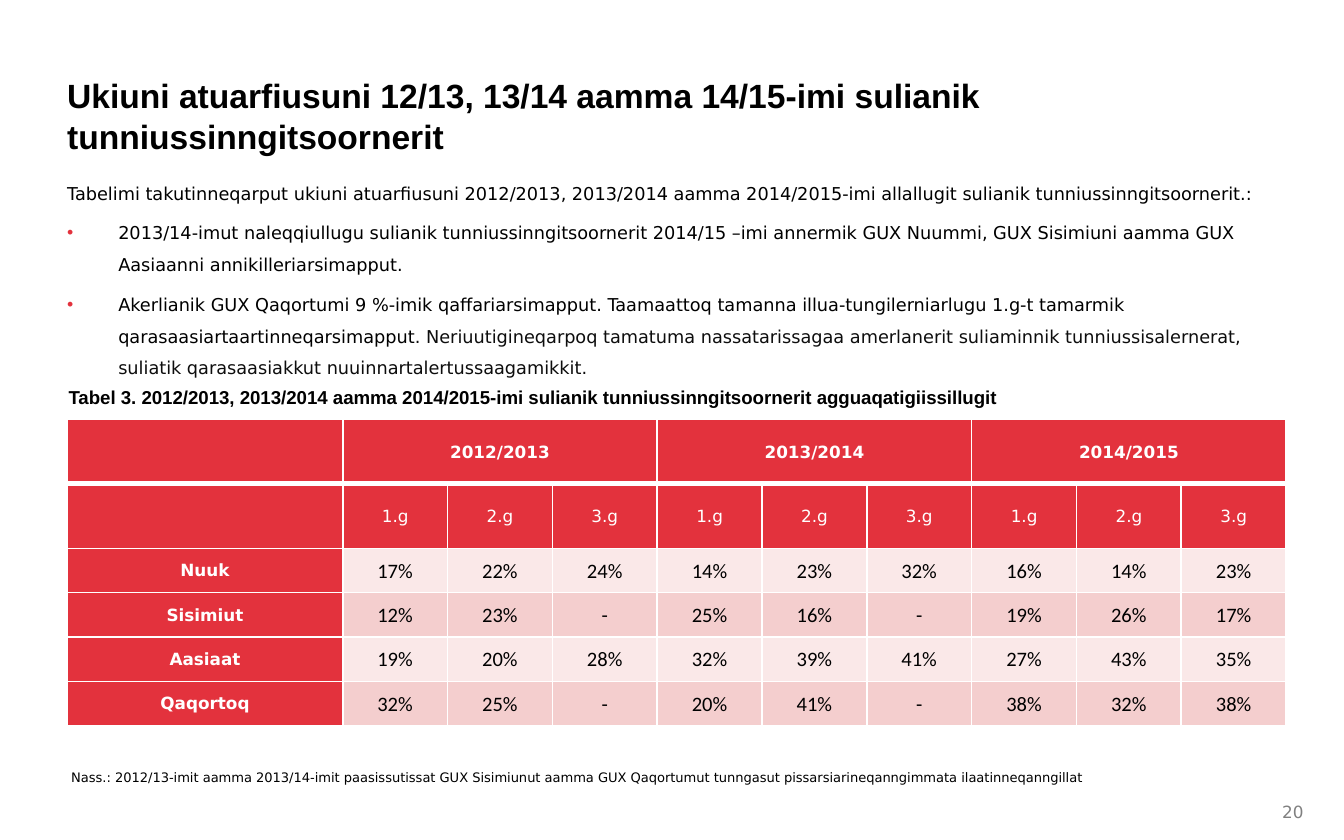
"""Build the slide on pupils without grades at the upper secondary schools."""
from dataclasses import dataclass

from lxml.etree import SubElement
from pptx import Presentation
from pptx.dml.color import RGBColor
from pptx.enum.text import MSO_ANCHOR as Anchor, MSO_AUTO_SIZE as AutoSize, PP_ALIGN as Align
from pptx.oxml.ns import qn
from pptx.util import Emu, Pt

PX = 9144
COLOURS = {"red": "E3323D", "black": "000000", "soft_black": "0D0D0D", "grey": "808080",
           "white": "FFFFFF", "pale": "FAE8E8", "pink": "F4CECE"}
INDENT = 38
YEARS = ["2012/2013", "2013/2014", "2014/2015"]
GRADES = ["1.g", "2.g", "3.g"]
SCHOOLS = {
    "Nuuk": "17% 22% 24% 14% 23% 32% 16% 14% 23%",
    "Sisimiut": "12% 23% - 25% 16% - 19% 26% 17%",
    "Aasiaat": "19% 20% 28% 32% 39% 41% 27% 43% 35%",
    "Qaqortoq": "32% 25% - 20% 41% - 38% 32% 38%",
}


@dataclass(frozen=True)
class Style:
    size: float
    font: str = "DejaVu Sans"
    colour: str = "black"
    bold: bool = False


@dataclass(frozen=True)
class Para:
    runs: tuple[tuple[str, Style], ...]
    spacing: float = 1.5
    bullet: bool = False


BODY = Style(9.5)
BODY_SOFT = Style(9.5, colour="soft_black")
HEADING = Style(9, colour="white", bold=True)
GRADE = Style(9, colour="white")
SHARE = Style(11, "Calibri")


def px(length: int) -> Emu:
    return Emu(length * PX)


def rgb(name: str) -> RGBColor:
    return RGBColor.from_string(COLOURS[name])


def add_run(paragraph, text: str, style: Style) -> None:
    run = paragraph.add_run()
    run.text = text
    run.font.size = Pt(style.size)
    run.font.name = style.font
    run.font.bold = style.bold
    run.font.color.rgb = rgb(style.colour)


def set_bullet(paragraph, bullet: bool) -> None:
    props = paragraph._p.get_or_add_pPr()
    margin = px(INDENT) if bullet else 0
    props.set("marL", str(margin))
    props.set("indent", str(-margin))
    if bullet:
        colour = SubElement(props, qn("a:buClr"))
        SubElement(colour, qn("a:srgbClr"), val=COLOURS["red"])
        SubElement(props, qn("a:buFont"), typeface="Arial")
        SubElement(props, qn("a:buChar"), char="•")
    else:
        SubElement(props, qn("a:buNone"))


def fill_text(shape, box: tuple[int, int, int, int], paras: list[Para],
              anchor: Anchor = Anchor.TOP) -> None:
    shape.left, shape.top, shape.width, shape.height = map(px, box)
    frame = shape.text_frame
    frame.word_wrap = True
    frame.auto_size = AutoSize.NONE
    frame.vertical_anchor = anchor
    frame.margin_left = frame.margin_top = frame.margin_right = frame.margin_bottom = 0
    for position, para in enumerate(paras):
        paragraph = frame.add_paragraph() if position else frame.paragraphs[0]
        set_bullet(paragraph, para.bullet)
        paragraph.alignment = Align.LEFT
        paragraph.line_spacing = para.spacing
        paragraph.space_before = Pt(2 if position else 0)
        paragraph.space_after = Pt(2)
        for text, style in para.runs:
            add_run(paragraph, text, style)


def fill_cell(cell, text: str, style: Style, fill: str, top: int = 1, bottom: int = 1) -> None:
    props = cell._tc.get_or_add_tcPr()
    for side, width in (("L", 1), ("R", 1), ("T", top), ("B", bottom)):
        line = SubElement(props, qn(f"a:ln{side}"), w=str(Pt(width)))
        SubElement(SubElement(line, qn("a:solidFill")), qn("a:srgbClr"), val=COLOURS["white"])
    cell.fill.solid()
    cell.fill.fore_color.rgb = rgb(fill)
    cell.vertical_anchor = Anchor.MIDDLE
    cell.margin_left = cell.margin_top = cell.margin_right = px(1)
    cell.margin_bottom = 0
    paragraph = cell.text_frame.paragraphs[0]
    paragraph.alignment = Align.CENTER
    if text:
        add_run(paragraph, text, style)
    else:
        paragraph.font.size = Pt(style.size)


def add_share_table(slide) -> None:
    heights = [48, 48] + [33] * len(SCHOOLS)
    widths = [205] + [78] * (len(YEARS) * len(GRADES))
    table = slide.shapes.add_table(len(heights), len(widths), px(50), px(312),
                                   px(sum(widths)), px(sum(heights))).table
    table.horz_banding = False
    for row, height in zip(table.rows, heights):
        row.height = px(height)
    for column, width in zip(table.columns, widths):
        column.width = px(width)

    year_row = [""] + [label for year in YEARS for label in (year, "", "")]
    for column, label in enumerate(year_row):
        fill_cell(table.cell(0, column), label, HEADING, "red", bottom=3)
    for first in range(1, len(widths), len(GRADES)):
        table.cell(0, first).merge(table.cell(0, first + len(GRADES) - 1))
    for column, label in enumerate([""] + GRADES * len(YEARS)):
        fill_cell(table.cell(1, column), label, GRADE, "red", top=3)
    for row, (school, shares) in enumerate(SCHOOLS.items(), start=2):
        fill_cell(table.cell(row, 0), school, HEADING, "red")
        for column, share in enumerate(shares.split(), start=1):
            fill_cell(table.cell(row, column), share, SHARE, "pink" if row % 2 else "pale")


def main() -> None:
    deck = Presentation()
    deck.slide_width, deck.slide_height = px(1000), px(625)
    slide = deck.slides.add_slide(deck.slide_layouts[3])
    title, findings, source_note = slide.placeholders

    fill_text(title, (50, 56, 917, 59), [Para(((
        "Ukiuni atuarfiusuni 12/13, 13/14 aamma 14/15-imi sulianik tunniussinngitsoornerit",
        Style(18, "Arial", bold=True)),), 1)])
    fill_text(findings, (50, 128, 900, 150), [
        Para((("Tabelimi takutinneqarput ukiuni atuarfiusuni 2012/2013, 2013/2014 aamma "
               "2014/2015-imi allallugit sulianik tunniussinngitsoornerit.:", BODY),)),
        Para((("2013/14-imut naleqqiullugu sulianik tunniussinngitsoornerit 2014/15 –imi annermik "
               "GUX Nuummi, GUX Sisimiuni aamma GUX Aasiaanni annikilleriarsimapput.", BODY),),
             bullet=True),
        Para((("Akerlianik GUX Qaqortumi 9 %-imik qaffariarsimapput. Taamaattoq tamanna "
               "illua-tungilerniarlugu 1.g-t tamarmik qarasaasiartaartinneqarsimapput", BODY),
              (". Neriuutigineqarpoq tamatuma nassatarissagaa amerlanerit suliaminnik "
               "tunniussisalernerat, suliatik qarasaasiakkut nuuinnartalertussaagamikkit.",
               BODY_SOFT)), bullet=True),
    ])
    fill_text(source_note, (53, 567, 900, 33), [Para(((
        "Nass.: 2012/13-imit aamma 2013/14-imit paasissutissat GUX Sisimiunut aamma GUX Qaqortumut "
        "tunngasut pissarsiarineqanngimmata ilaatinneqanngillat", Style(7)),))])

    caption = slide.shapes.add_textbox(0, 0, 0, 0)
    fill_text(caption, (51, 285, 782, 19), [Para(((
        "Tabel 3. 2012/2013, 2013/2014 aamma 2014/2015-imi sulianik tunniussinngitsoornerit "
        "agguaqatigiissillugit", Style(10, "Arial", bold=True)),), 1.14)])
    page_number = slide.shapes.add_textbox(0, 0, 0, 0)
    fill_text(page_number, (954, 598, 21, 9),
              [Para((("20", Style(9, colour="grey")),), 1.2)], Anchor.MIDDLE)
    add_share_table(slide)
    deck.save("out.pptx")


if __name__ == "__main__":
    main()
